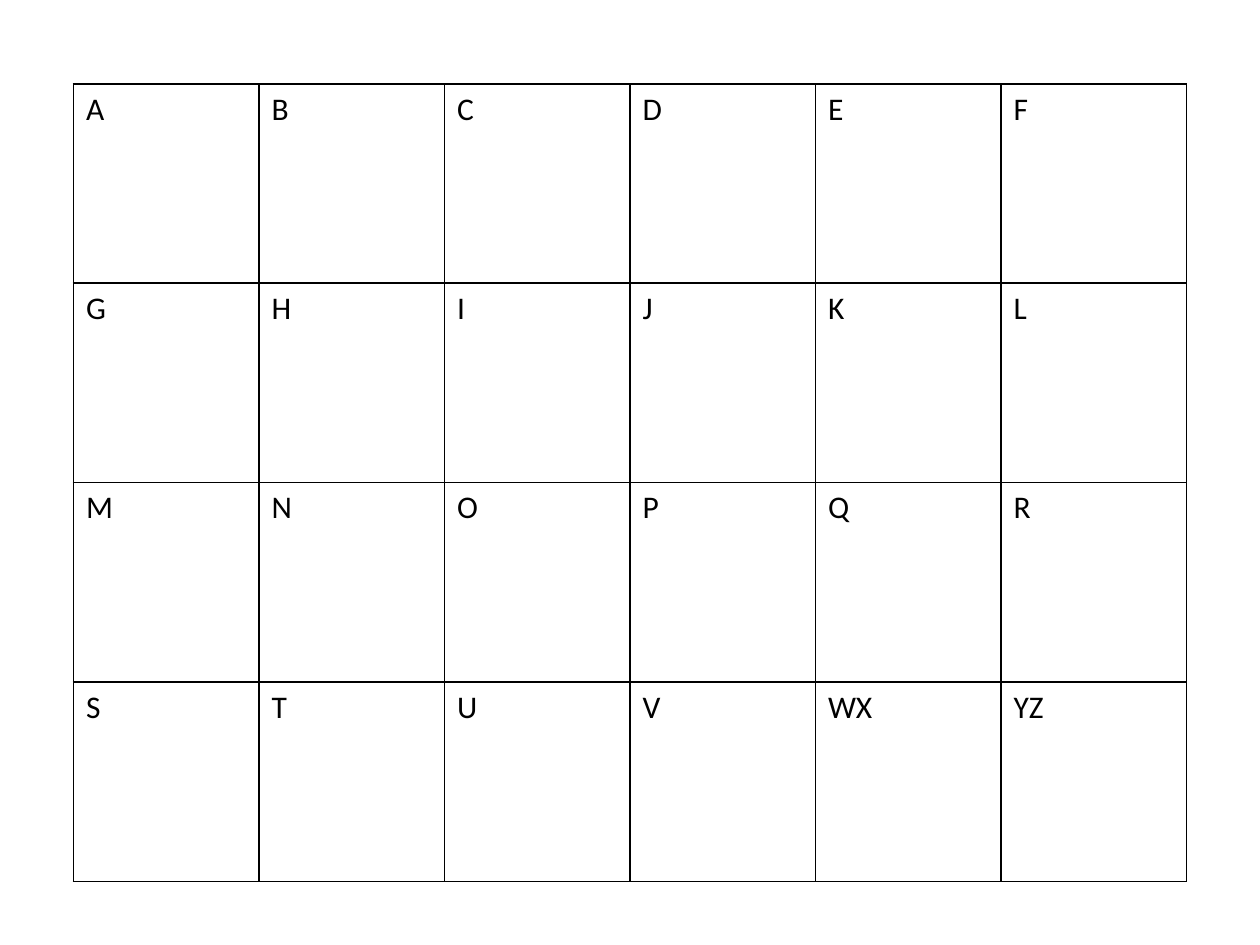
from dataclasses import dataclass

from lxml.etree import SubElement
from pptx import Presentation
from pptx.dml.color import RGBColor
from pptx.oxml.ns import qn
from pptx.slide import Slide
from pptx.table import _Cell
from pptx.text.text import TextFrame
from pptx.util import Cm, Length, Pt

BLACK = RGBColor(0x00, 0x00, 0x00)
FONT_NAME = "Calibri"
BORDER_SIDES = ("a:lnL", "a:lnR", "a:lnT", "a:lnB")


@dataclass(frozen=True)
class LetterGrid:
    left: Length
    top: Length
    column_width: Length
    row_height: Length
    rows: list[list[str]]


ALPHABET_GRID = LetterGrid(
    left=Cm(1.48),
    top=Cm(1.69),
    column_width=Cm(3.74),
    row_height=Cm(4.02),
    rows=[
        list("ABCDEF"),
        list("GHIJKL"),
        list("MNOPQR"),
        [*"STUV", "WX", "YZ"],
    ],
)


def write_text(frame: TextFrame, text: str, *, size: float = 18,
               color: RGBColor = BLACK, bold: bool = False) -> None:
    run = frame.paragraphs[0].add_run()
    run.text = text
    run.font.name = FONT_NAME
    run.font.size = Pt(size)
    run.font.bold = bold
    run.font.color.rgb = color


def add_borders(cell: _Cell, color: RGBColor, width: Length) -> None:
    properties = cell._tc.get_or_add_tcPr()
    for side in BORDER_SIDES:
        line = SubElement(properties, qn(side), w=str(width))
        fill = SubElement(line, qn("a:solidFill"))
        SubElement(fill, qn("a:srgbClr"), val=str(color))


def add_letter_grid(slide: Slide, grid: LetterGrid) -> None:
    row_count, column_count = len(grid.rows), len(grid.rows[0])
    table = slide.shapes.add_table(
        row_count, column_count, grid.left, grid.top,
        grid.column_width * column_count, grid.row_height * row_count,
    ).table
    table.first_row = False
    table.horz_banding = False

    # Equal columns and rows
    for column in table.columns:
        column.width = grid.column_width
    for row in table.rows:
        row.height = grid.row_height

    # Letters, borders and clear cell fills
    for row_index, letters in enumerate(grid.rows):
        for column_index, letter in enumerate(letters):
            cell = table.cell(row_index, column_index)
            add_borders(cell, BLACK, Pt(1))
            cell.fill.background()
            write_text(cell.text_frame, letter)


def main() -> None:
    presentation = Presentation()
    presentation.slide_width = Cm(25.4)
    presentation.slide_height = Cm(19.05)
    slide = presentation.slides.add_slide(presentation.slide_layouts[6])
    add_letter_grid(slide, ALPHABET_GRID)
    presentation.save("out.pptx")


if __name__ == "__main__":
    main()
